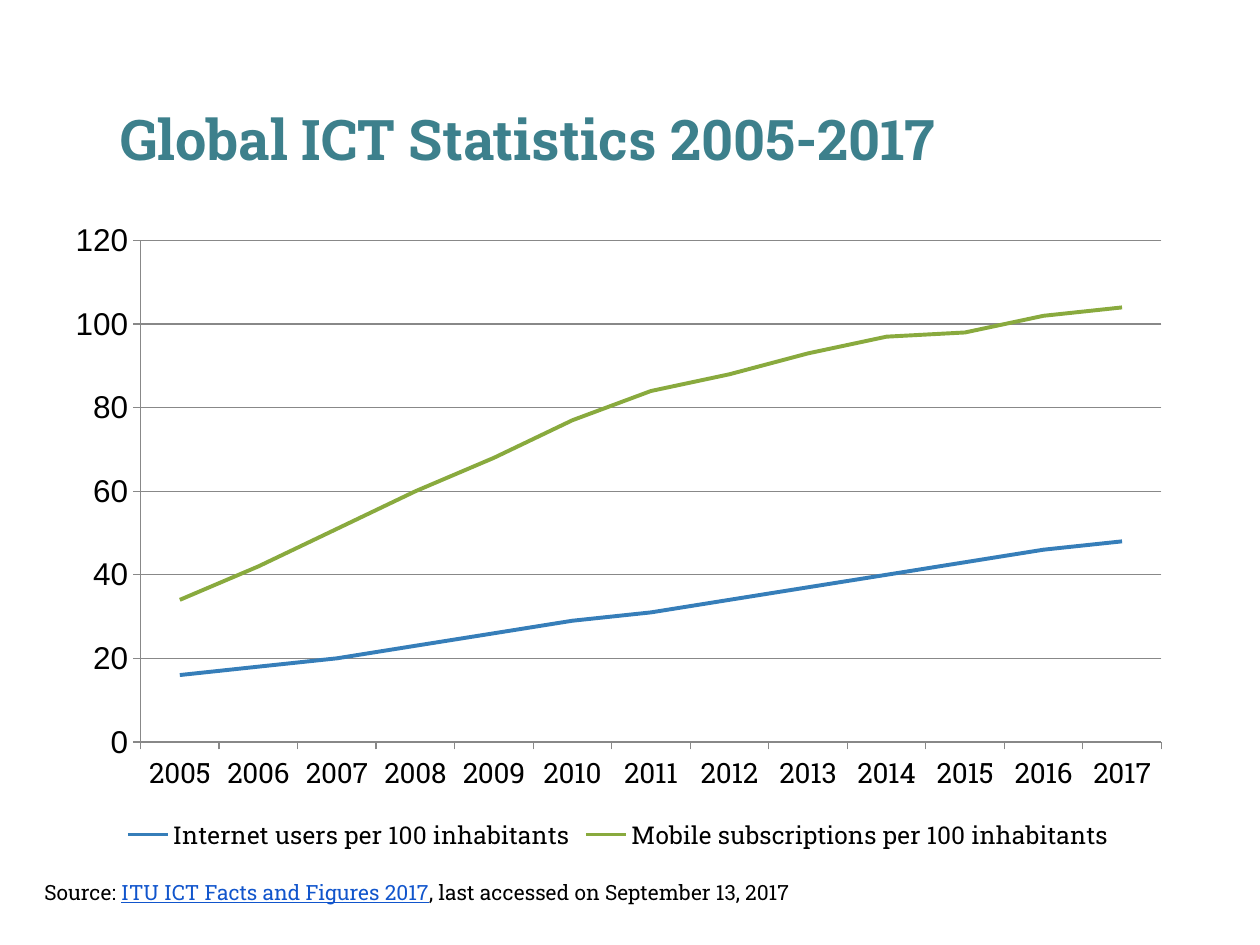
from pptx import Presentation
from pptx.chart.data import CategoryChartData
from pptx.dml.color import RGBColor
from pptx.enum.chart import XL_CHART_TYPE as ChartType, XL_LEGEND_POSITION as LegendPosition
from pptx.enum.chart import XL_MARKER_STYLE as MarkerStyle, XL_TICK_MARK as TickMark
from pptx.enum.text import MSO_ANCHOR as Anchor
from pptx.util import Pt

EMU_PER_INCH = 914400
PX_PER_INCH = 126

BLACK = RGBColor(0x00, 0x00, 0x00)
TEAL = RGBColor(0x3D, 0x80, 0x8C)
GRAY = RGBColor(0x88, 0x88, 0x88)
BLUE = RGBColor(0x36, 0x7E, 0xB9)
GREEN = RGBColor(0x89, 0xAA, 0x3E)
LINK_BLUE = RGBColor(0x11, 0x55, 0xCC)
SLAB = "Roboto Slab"
SANS = "Arial"

YEARS = [str(year) for year in range(2005, 2018)]
SERIES = [
    ("Internet users per 100 inhabitants", BLUE,
     [16, 18, 20, 23, 26, 29, 31, 34, 37, 40, 43, 46, 48]),
    ("Mobile subscriptions per 100 inhabitants", GREEN,
     [34, 42, 51, 60, 68, 77, 84, 88, 93, 97, 98, 102, 104]),
]


def px(length):
    return round(length * EMU_PER_INCH / PX_PER_INCH)


def style_font(font, name, size, color=BLACK, bold=False):
    font.name = name
    font.size = Pt(size)
    font.bold = bold
    font.color.rgb = color


def style_line(line, color, width):
    line.color.rgb = color
    line.width = Pt(width)


def add_text_box(page, box):
    frame = page.shapes.add_textbox(*map(px, box)).text_frame
    frame.word_wrap = True
    return frame


def add_title(page, box):
    frame = add_text_box(page, box)
    frame.vertical_anchor = Anchor.BOTTOM
    frame.margin_top = frame.margin_bottom = px(13)
    frame.text = "Global ICT Statistics 2005-2017"
    style_font(frame.paragraphs[0].runs[0].font, SLAB, 32, TEAL, True)


def style_axis(axis, font_name, size):
    axis.major_tick_mark = TickMark.OUTSIDE
    axis.minor_tick_mark = TickMark.NONE
    style_line(axis.format.line, GRAY, 0.75)
    style_font(axis.tick_labels.font, font_name, size)


def add_line_chart(page, box):
    data = CategoryChartData(number_format="0")
    data.categories = YEARS
    for name, _, values in SERIES:
        data.add_series(name, values)
    chart = page.shapes.add_chart(ChartType.LINE, *map(px, box), data).chart
    chart.has_title = False
    style_font(chart.font, SANS, 18)

    style_axis(chart.category_axis, SLAB, 16)
    value_axis = chart.value_axis
    style_axis(value_axis, SANS, 18)
    value_axis.minimum_scale = 0
    value_axis.maximum_scale = 120
    value_axis.major_unit = 20
    value_axis.tick_labels.number_format = "0"
    value_axis.tick_labels.number_format_is_linked = False
    style_line(value_axis.major_gridlines.format.line, GRAY, 0.75)

    chart.has_legend = True
    chart.legend.position = LegendPosition.BOTTOM
    chart.legend.include_in_layout = False
    style_font(chart.legend.font, SLAB, 14)

    plot = chart.plots[0]
    plot.vary_by_categories = False
    for series, (_, color, _) in zip(plot.series, SERIES):
        series.smooth = False
        series.marker.style = MarkerStyle.NONE
        style_line(series.format.line, color, 2.25)


def add_source(page, box):
    para = add_text_box(page, box).paragraphs[0]
    parts = [
        ("Source: ", BLACK, False),
        ("ITU ICT Facts and Figures 2017", LINK_BLUE, True),
        (", last accessed on September 13, 2017", BLACK, False),
    ]
    for text, color, underline in parts:
        span = para.add_run()
        span.text = text
        style_font(span.font, SLAB, 12, color)
        span.font.underline = underline


def main():
    deck = Presentation()
    deck.slide_width, deck.slide_height = px(1260), px(945)
    page = deck.slides.add_slide(deck.slide_layouts[6])
    add_title(page, (108, 57, 1043, 128))
    add_line_chart(page, (53, 210, 1131, 646))
    add_source(page, (32, 873, 1092, 38))
    deck.save("out.pptx")


if __name__ == "__main__":
    main()
